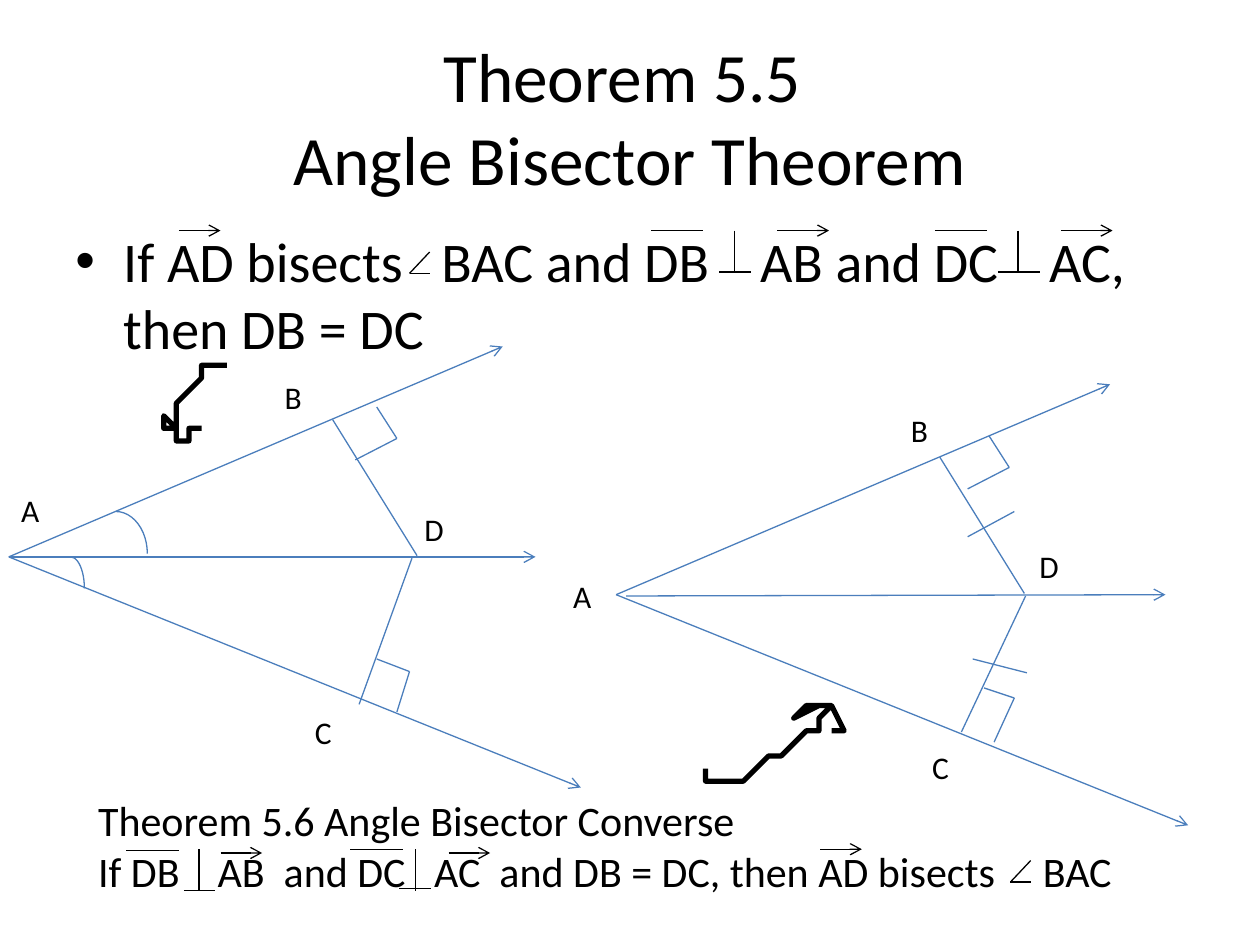
from pptx import Presentation
from pptx.dml.color import RGBColor as Rgb
from pptx.enum.shapes import MSO_CONNECTOR as Conn, MSO_SHAPE as Kind
from pptx.enum.text import MSO_ANCHOR as Anchor, PP_ALIGN as Align
from pptx.oxml.ns import qn
from pptx.util import Inches, Pt
from lxml.etree import SubElement as Sub

COLS, ROWS = 100, 75
CELL = Inches(0.1)
HUES = {"ink": "000000", "blue": "4B7EBC"}
SPACE = 0.226


def cell(*nums):
    return [round(n * CELL) for n in nums]


def style(line, hue, width=0.75):
    line.color.rgb = Rgb.from_string(HUES[hue])
    line.width = Pt(width)


def link(slide, box, start, end, hue="ink", arrow=False):
    x, y = box
    ends = cell(x + start[0], y + start[1], x + end[0], y + end[1])
    line = slide.shapes.add_connector(Conn.STRAIGHT, *ends)
    style(line.line, hue)
    props = line._element.spPr
    if arrow:
        Sub(props.find(qn("a:ln")), qn("a:tailEnd"), type="arrow")
    Sub(props, qn("a:effectLst"))


def chain(slide, box, dots, hue="ink"):
    for start, end in zip(dots, dots[1:]):
        link(slide, box, start, end, hue)


def curve(slide, box, dots):
    x, y = box
    spots = [(x + a, y + b) for a, b in dots]
    form = slide.shapes.build_freeform(*spots[0], scale=CELL)
    form.add_line_segments(spots[1:], close=False)
    shape = form.convert_to_shape()
    shape.shadow.inherit = False
    shape.fill.background()
    style(shape.line, "ink", 3)


def arc(slide, box, x, y, wide, high):
    spot = cell(box[0] + x, box[1] + y, wide, high)
    shape = slide.shapes.add_shape(Kind.ARC, *spot)
    shape.shadow.inherit = False
    shape.fill.background()
    style(shape.line, "blue")


def write(slide, box, lines, size):
    frame = slide.shapes.add_textbox(*cell(*box)).text_frame
    frame.word_wrap = True
    for i, parts in enumerate(lines):
        par = frame.add_paragraph() if i else frame.paragraphs[0]
        par.font.name = "Calibri"
        par.font.size = Pt(size)
        par.font.color.rgb = Rgb.from_string(HUES["ink"])
        for part in parts:
            if part == "\n":
                par.add_line_break()
                continue
            run = par.add_run()
            if isinstance(part, str):
                run.text = part
            else:
                run.text = " "
                extra = round((part - 1) * SPACE * size * 100)
                run._r.get_or_add_rPr().set("spc", str(extra))
    return frame


def perp(slide, box, stem, left, right, foot=3.3):
    link(slide, box, (stem, 0), (stem, 3.3))
    link(slide, box, (left, foot), (right, foot))


def angle(slide, box):
    chain(slide, box, [(1.6, 0), (0, 1.7), (1.6, 1.7)])


def title(slide, box):
    frame = write(slide, box, [["Theorem 5.5 ", "\n", "Angle Bisector Theorem"]], 39.6)
    frame.vertical_anchor = Anchor.MIDDLE
    frame.paragraphs[0].alignment = Align.CENTER


def claim(slide, box):
    text = ["If AD bisects", 3, "BAC and DB", 4, "AB and DC", 4, "AC, then DB = DC"]
    frame = write(slide, box, [text], 32)
    props = frame.paragraphs[0]._p.get_or_add_pPr()
    props.set("marL", str(Inches(0.38)))
    props.set("indent", str(-Inches(0.38)))
    font = props.find(qn("a:defRPr"))
    for tag, pair in (("a:buFont", ("typeface", "Arial")), ("a:buChar", ("char", "•"))):
        node = Sub(props, qn(tag))
        node.set(*pair)
        font.addprevious(node)
    base = box[0], box[1] + 0.8
    for x, wide, arrow in ((9.2, 3.3, True), (46.7, 4.1, False), (56.7, 4.1, True),
                           (69.2, 4.1, False), (79.2, 4.1, True)):
        link(slide, base, (x, 0), (x + wide, 0), arrow=arrow)
    perp(slide, base, 53.3, 52.1, 54.6)
    perp(slide, base, 75.8, 74.2, 77.5)
    angle(slide, (box[0] + 27.5, box[1] + 2.5))


def figure(slide, box, mid, leg, top, low, names):
    for start, end in (((0, 0), (39.2, -16.7)), ((0, 0), (45.4, 18.3)), mid):
        link(slide, box, start, end, "blue", True)
    x, y = top
    corner = [(x, y), (x + 3.3, y - 1.7), (x + 1.7, y - 4.2)]
    for dots in ([(25.7, -10.9), (32.4, -0.1)], leg, corner, low):
        chain(slide, box, dots, "blue")
    for name, (x, y) in zip("ABCD", names):
        write(slide, (box[0] + x, box[1] + y, 4.2, 4), [[name]], 18)


def given(slide, box):
    figure(slide, box, ((0, 0), (41.8, 0)), [(32, 0.1), (27.8, 11.7)], (27.5, -7.7),
           [(29.2, 8.1), (31.8, 9.1), (30.8, 12.3)],
           [(0, -5.7), (20.9, -14.7), (23.3, 11.9), (32, -4.2)])
    arc(slide, box, 6, -3.6, 5, 6.7)
    arc(slide, box, 3.8, 0, 2.2, 5)
    curve(slide, (box[0] + 12.5, box[1] - 15.5),
          [(4.8, 0), (4.1, 0.2), (3.3, 0.6), (2.6, 1.3), (1.8, 2.2), (1.3, 3.2),
           (1, 4.5), (0.9, 6.2), (0.5, 5.4), (0.2, 4.9), (0, 4.3), (0.3, 5.4),
           (0.6, 6), (0.9, 6.3), (1.4, 6), (2, 5.6), (2.5, 5.6)])


def reverse(slide, box):
    figure(slide, box, ((0.8, 0.1), (43.6, 0)), [(32.5, 0.1), (27.4, 10.9)], (27.9, -8.4),
           [(29.2, 7.4), (31.6, 8.2), (30, 11.7)],
           [(-4.4, -1.9), (22.4, -15.1), (24.1, 11.7), (32.6, -4.3)])
    for dots in ([(27.9, -4.6), (31.6, -6.6)], [(28.3, 5.1), (32.6, 6.2)]):
        chain(slide, box, dots, "blue")
    curve(slide, (box[0] + 6.7, box[1] + 8.6),
          [(0, 5.1), (0.3, 5.4), (0.8, 5.7), (1.5, 5.8), (2.2, 5.9), (3, 5.8),
           (4, 5.5), (4.9, 5.1), (5.7, 4.6), (6.6, 4), (7.5, 3.2), (8.2, 2.4),
           (9, 1.7), (9.8, 0.9), (10.3, 0.5), (9.4, 0.5), (7.8, 0.7), (8.7, 0.5),
           (9.6, 0.2), (10.4, 0), (10.6, 0), (10.8, 0.6), (11.1, 1.7), (10.9, 2.5)])


def footer(slide, box):
    text = ["If DB", 4, "AB", 2, "and DC", 3, "AC", 2,
            "and DB = DC, then AD bisects", 5, "BAC"]
    write(slide, box, [["Theorem 5.6 Angle Bisector Converse"], text], 24)
    base = box[0], box[1] + 4.8
    for x, y, wide, arrow in ((3.2, 0.1, 4.2, False), (10.7, 0.3, 3.3, True),
                              (21, 0, 4.2, False), (28.8, 0.3, 3.3, True),
                              (58.3, 0, 3.3, True)):
        link(slide, base, (x, y), (x + wide, y), arrow=arrow)
    perp(slide, base, 9, 7.8, 10.3)
    perp(slide, base, 26.2, 24.9, 27.4, 3.1)
    angle(slide, (box[0] + 73.4, box[1] + 5.7))


def main():
    deck = Presentation()
    deck.slide_width, deck.slide_height = cell(COLS, ROWS)
    slide = deck.slides.add_slide(deck.slide_layouts[6])
    title(slide, (5, 3, 90, 12.5))
    claim(slide, (5, 17.5, 90, 49.5))
    given(slide, (0.7, 44.2))
    reverse(slide, (48.9, 47.2))
    footer(slide, (6.8, 62.6, 83.8, 9.1))
    deck.save("out.pptx")


if __name__ == "__main__":
    main()
